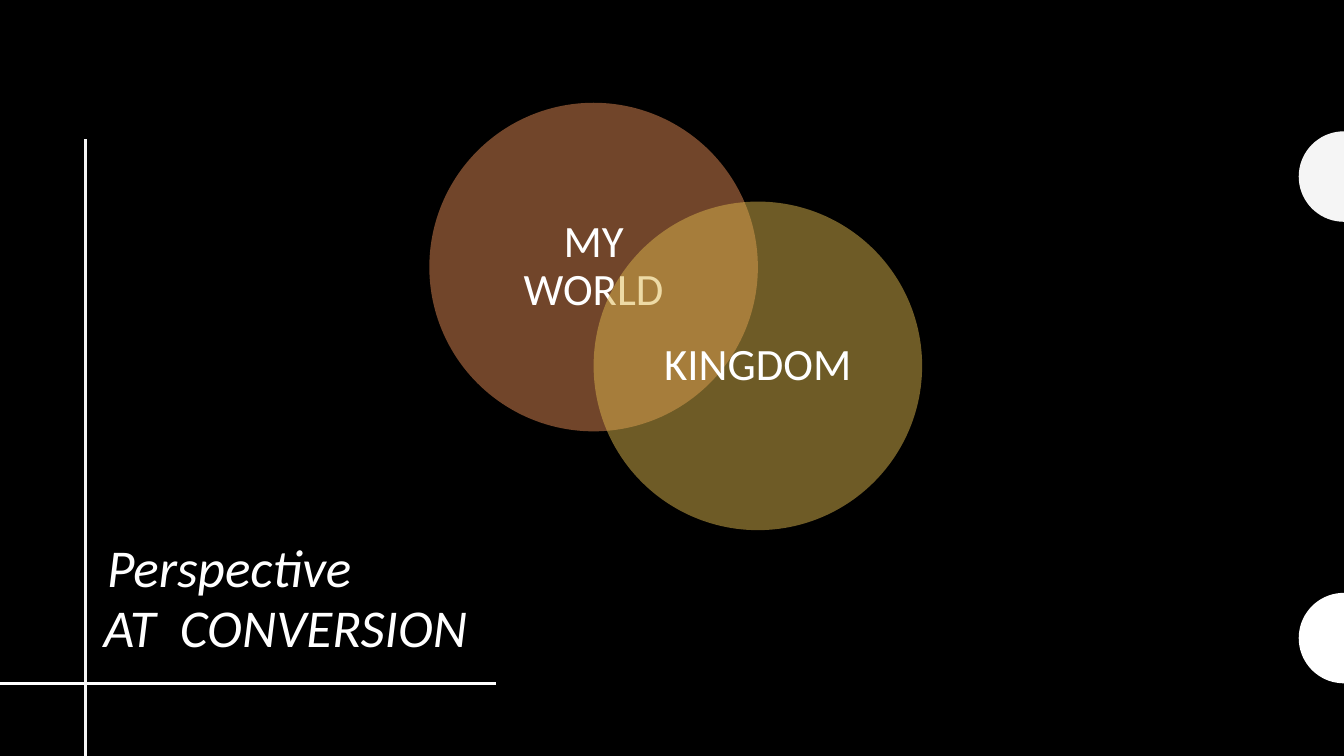
import math
from lxml import etree
from pptx import Presentation
from pptx import util as u
from pptx.dml.color import RGBColor
from pptx.enum import shapes, text
from pptx.oxml.ns import qn

# Content: lengths in centimetres, text sizes in points
COLOURS = {"black": "000000", "white": "FFFFFF", "pale": "F5F5F5",
           "rust": "E28B55", "gold": "DCB64D"}
FONT = "Calibri"
WIDTH, HEIGHT = 33.87, 19.05
TITLE = [[(" ", 11), ("Perspective", 38)], [("AT  CONVERSION", 38)]]
TITLE_BOX = (2.36, 13.72, 20.12, 2.79)
CIRCLES = [("MY WORLD", "rust", 10.82, 2.59), ("KINGDOM", "gold", 14.96, 5.08)]
DIAMETER = 8.28
LABEL_SIZE = (5.84, 5.87)
HALF_DISCS = [("white", 16.08), ("pale", 4.45)]  # colour, centre height
RADIUS = 1.14
RULES = [("white", 0, 17.22, 12.5, 17.22), ("pale", 2.16, 3.51, 2.16, HEIGHT)]


def colour(name):
    return RGBColor.from_string(COLOURS[name])


def paint(shape, name):
    shape.shadow.inherit = False
    shape.fill.solid()
    shape.fill.fore_color.rgb = colour(name)
    shape.line.fill.background()


def add_text(page, lines, place, align=text.PP_ALIGN.LEFT, spacing=0.9,
             italic=False, inset=(0.25, 0.13)):
    box = page.shapes.add_textbox(*map(u.Cm, place))
    frame = box.text_frame
    frame.word_wrap = True
    frame.vertical_anchor = text.MSO_ANCHOR.MIDDLE
    frame.margin_left = frame.margin_right = u.Cm(inset[0])
    frame.margin_top = frame.margin_bottom = u.Cm(inset[1])
    for number, spans in enumerate(lines):
        para = frame.add_paragraph() if number else frame.paragraphs[0]
        para.alignment = align
        para.line_spacing = spacing
        for words, size in spans:
            span = para.add_run()
            span.text = words
            span.font.name = FONT
            span.font.size = u.Pt(size)
            span.font.italic = italic
            span.font.color.rgb = colour("white")


def add_half_disc(page, name, middle):
    angles = [math.radians(90 + 5 * step) for step in range(37)]
    points = [(u.Cm(WIDTH + RADIUS * math.cos(a)), u.Cm(middle + RADIUS * math.sin(a)))
              for a in angles]
    outline = page.shapes.build_freeform(*points[0])
    outline.add_line_segments(points[1:], close=True)
    paint(outline.convert_to_shape(), name)


def add_rule(page, name, *ends):
    rule = page.shapes.add_connector(shapes.MSO_CONNECTOR.STRAIGHT, *map(u.Cm, ends))
    rule.line.color.rgb = colour(name)
    rule.line.width = u.Pt(2)
    etree.SubElement(rule._element.spPr, qn("a:effectLst"))


def add_circle(page, label, name, left, top):
    circle = page.shapes.add_shape(shapes.MSO_SHAPE.OVAL,
                                   *map(u.Cm, (left, top, DIAMETER, DIAMETER)))
    paint(circle, name)
    shade = circle._element.spPr.find(qn("a:solidFill"))[0]
    etree.SubElement(shade, qn("a:alpha"), val="50000")
    wide, high = LABEL_SIZE
    place = (left + (DIAMETER - wide) / 2, top + (DIAMETER - high) / 2, wide, high)
    add_text(page, [[(label, 32)]], place, align=text.PP_ALIGN.CENTER, inset=(0.33, 0.33))


def main():
    deck = Presentation()
    deck.slide_width, deck.slide_height = u.Cm(WIDTH), u.Cm(HEIGHT)
    page = deck.slides.add_slide(deck.slide_layouts[6])
    page.background.fill.solid()
    page.background.fill.fore_color.rgb = colour("black")

    # Edge decoration
    for half_disc, rule in zip(HALF_DISCS, RULES):
        add_half_disc(page, *half_disc)
        add_rule(page, *rule)

    # Title
    add_text(page, TITLE, TITLE_BOX, spacing=0.94, italic=True)

    # Overlapping circles
    for circle in CIRCLES:
        add_circle(page, *circle)

    deck.save("out.pptx")


if __name__ == "__main__":
    main()
